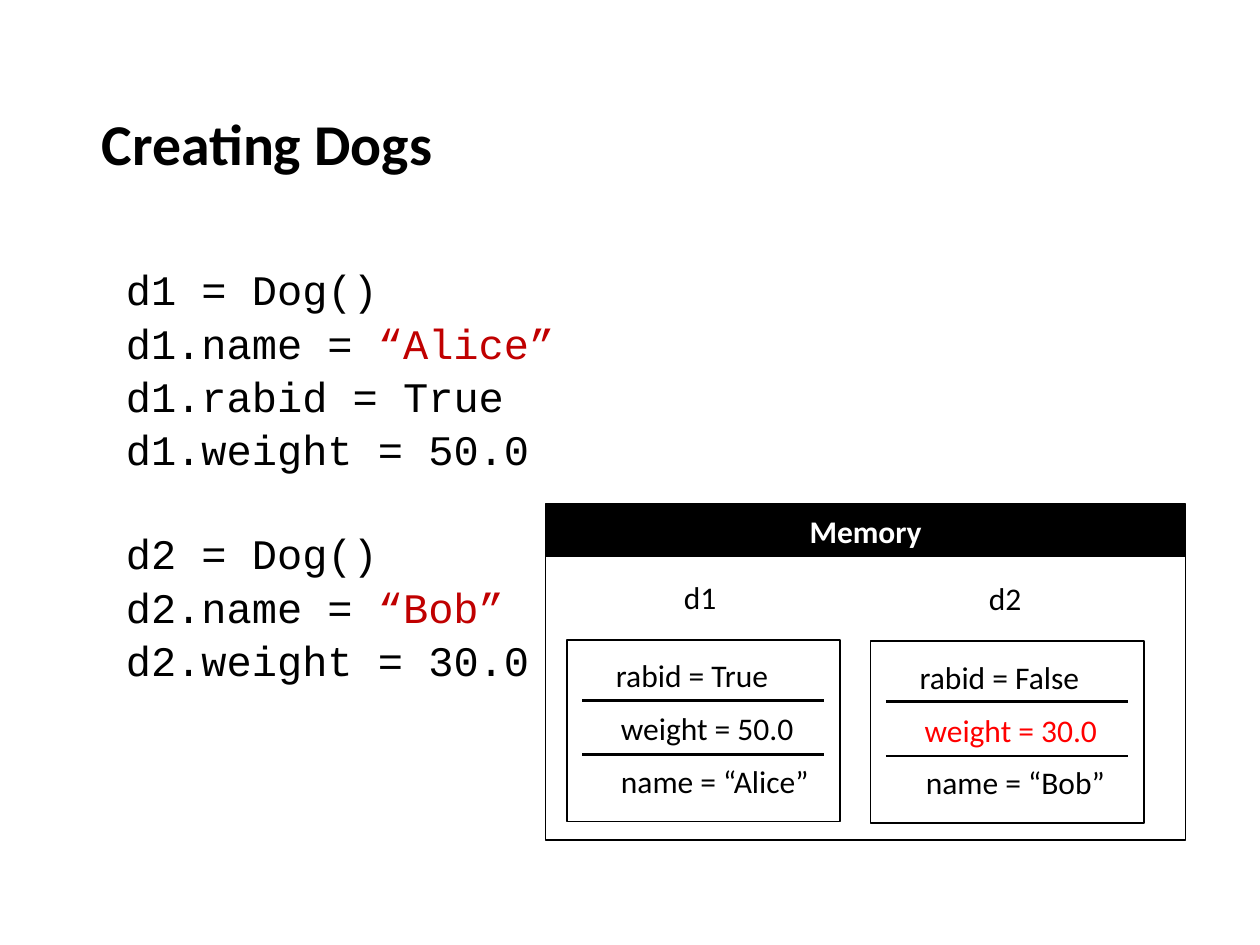
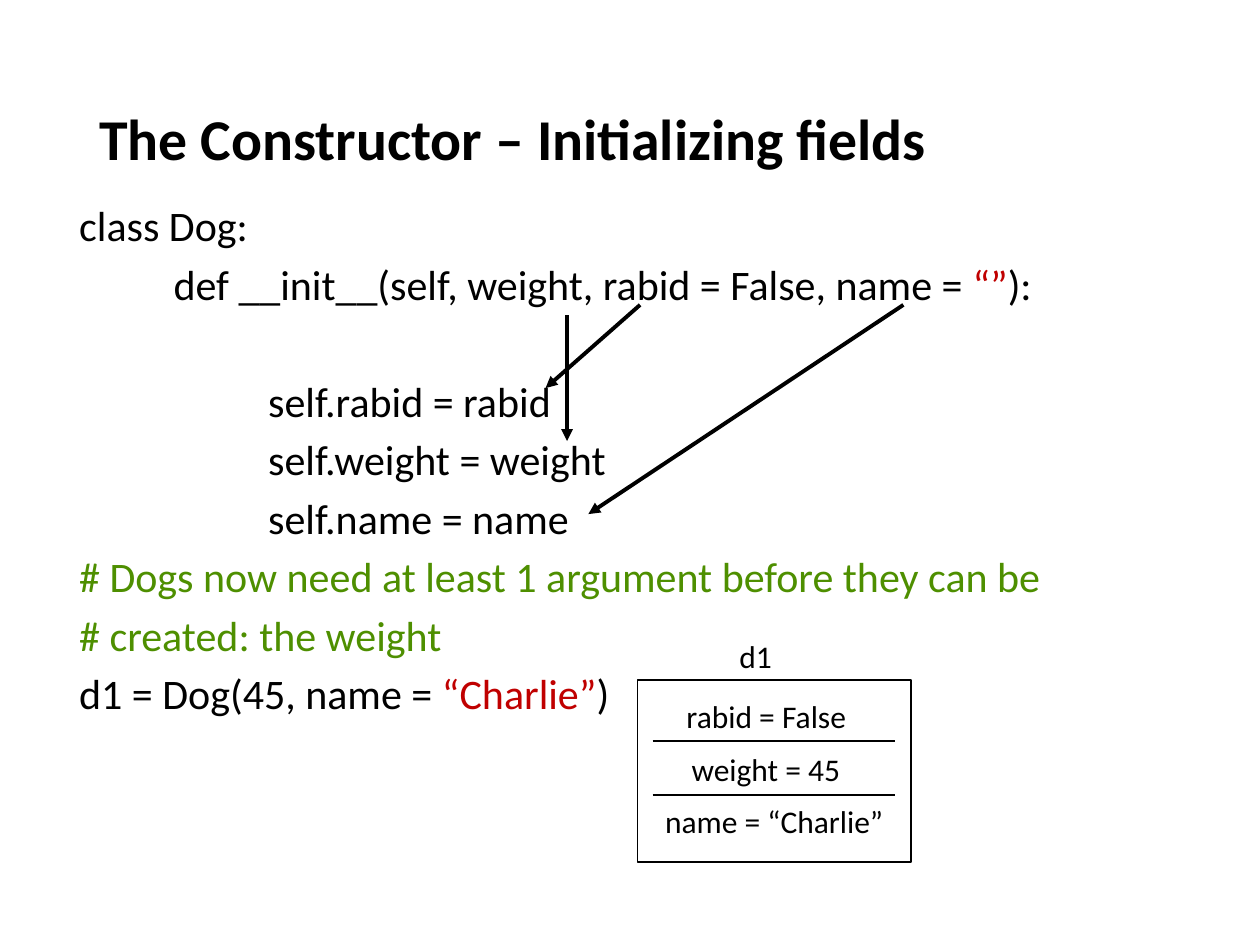
from dataclasses import dataclass
from pptx import Presentation
from pptx.dml.color import RGBColor
from pptx.enum.shapes import MSO_CONNECTOR, MSO_SHAPE
from pptx.enum.text import MSO_ANCHOR, MSO_AUTO_SIZE, PP_ALIGN
from pptx.oxml.ns import qn
from pptx.util import Inches, Pt
from lxml import etree

RECT = MSO_SHAPE.RECTANGLE
LINE = MSO_CONNECTOR.STRAIGHT
MIDDLE = MSO_ANCHOR.MIDDLE
GROW = MSO_AUTO_SIZE.SHAPE_TO_FIT_TEXT
CENTER = PP_ALIGN.CENTER


@dataclass(frozen=True)
class Theme:
    black: str = "000000"
    white: str = "FFFFFF"
    quote: str = "C00000"
    alert: str = "FF0000"
    note: str = "4E8F00"
    sans: str = "Calibri"
    mono: str = "Courier New"
    title: int = 33
    code: int = 24
    label: int = 18
    border: float = 1
    rule: float = 1.5
    arrow: float = 2.25


T = Theme()

# Each line of code: indent level, blank line above, runs of (text, colour)
DOGS = [
    (0, False, [("d1 = Dog()", T.black)]),
    (0, False, [("d1.name = ", T.black), ("“Alice”", T.quote)]),
    (0, False, [("d1.rabid = True", T.black)]),
    (0, False, [("d1.weight = 50.0", T.black)]),
    (0, True, [("d2 = Dog()", T.black)]),
    (0, False, [("d2.name = ", T.black), ("“Bob”", T.quote)]),
    (0, False, [("d2.weight = 30.0", T.black)]),
]
INIT = [
    (0, False, [("class Dog:", T.black)]),
    (1, False, [("def __init__(self, weight, rabid = False, name = ", T.black),
                ("“”", T.quote), ("):", T.black)]),
    (2, True, [("self.rabid = rabid", T.black)]),
    (2, False, [("self.weight = weight", T.black)]),
    (2, False, [("self.name = name", T.black)]),
    (0, False, [("# Dogs now need at least 1 argument before they can be", T.note)]),
    (0, False, [("# created: the weight", T.note)]),
    (0, False, [("d1 = Dog(45, name = ", T.black), ("“Charlie”", T.quote),
                (")", T.black)]),
]
# Each card: place, name and its offset, fields of (text, colour, left offset)
ALICE = ((4.5, 5.08), "d1", (0.83, -0.54), [
    ("rabid = True", T.black, 0.29),
    ("weight = 50.0", T.black, 0.33),
    ("name = “Alice”", T.black, 0.33)])
BOB = ((6.91, 5.09), "d2", (0.84, -0.54), [
    ("rabid = False", T.black, 0.29),
    ("weight = 30.0", T.alert, 0.33),
    ("name = “Bob”", T.black, 0.34)])
CHARLIE = ((5.06, 5.4), "d1", (0.71, -0.39), [
    ("rabid = False", T.black, 0.29),
    ("weight = 45", T.black, 0.33),
    ("name = “Charlie”", T.black, 0.12)])
ARROWS = [
    ((4.5, 2.5), (4.5, 3.5)),
    ((7.17, 2.42), (4.67, 4.08)),
    ((5.08, 2.42), (4.33, 3.08)),
]


def rgb(code):
    return RGBColor.from_string(code)


def style(para, size, color=T.black, face=T.sans, bold=False):
    font = para.font
    font.name, font.size, font.bold = face, Pt(size), bold
    font.color.rgb = rgb(color)


def text_box(slide, left, top, width, height):
    box = slide.shapes.add_textbox(*map(Inches, (left, top, width, height)))
    box.text_frame.word_wrap = True
    return box.text_frame


def add_title(slide, text, left, top):
    frame = text_box(slide, left, top, 8.62, 1.45)
    frame.vertical_anchor = MIDDLE
    para = frame.paragraphs[0]
    para.text = text
    para.line_spacing = 0.9
    style(para, T.title, bold=True)


def add_code(slide, lines, area, face, pitch, gap, blank):
    """Write code lines; blank is the extra space that stands for an empty line."""
    frame = text_box(slide, *area)
    for num, (level, skip, runs) in enumerate(lines):
        para = frame.add_paragraph() if num else frame.paragraphs[0]
        if level:
            para._p.get_or_add_pPr().set("marL", str(Inches(0.75 * level)))
        para.line_spacing = pitch
        if num:
            para.space_before = Pt(gap + (blank if skip else 0))
        style(para, T.code, face=face)
        for text, color in runs:
            run = para.add_run()
            run.text = text
            if color != T.black:
                run.font.color.rgb = rgb(color)


def add_label(slide, text, left, top, width, color=T.black):
    frame = text_box(slide, left, top, width, 0.4)
    frame.auto_size = GROW
    para = frame.paragraphs[0]
    para.text = text
    style(para, T.label, color)


def add_rect(slide, left, top, width, height, fill=None):
    """Draw a filled band, or an outlined box when there is no fill."""
    rect = slide.shapes.add_shape(RECT, *map(Inches, (left, top, width, height)))
    rect.shadow.inherit = False
    if fill:
        rect.fill.solid()
        rect.fill.fore_color.rgb = rgb(fill)
        rect.line.fill.background()
    else:
        rect.fill.background()
        rect.line.color.rgb = rgb(T.black)
        rect.line.width = Pt(T.border)
    return rect


def add_line(slide, start, end, width, head=False):
    line = slide.shapes.add_connector(LINE, *map(Inches, (*start, *end)))
    line.line.color.rgb = rgb(T.black)
    line.line.width = Pt(width)
    if head:
        etree.SubElement(line.line._get_or_add_ln(), qn("a:tailEnd"), type="triangle")
    etree.SubElement(line._element.spPr, qn("a:effectLst"))


def add_card(slide, place, name, shift, fields):
    left, top = place
    add_rect(slide, left, top, 2.17, 1.44)
    add_label(slide, name, left + shift[0], top + shift[1], 0.5)
    for num, (text, color, inset) in enumerate(fields):
        add_label(slide, text, left + inset, top + 0.08 + 0.42 * num,
                  2.16 - inset, color)
        if num:
            y = top + 0.05 + 0.43 * num
            add_line(slide, (left + 0.12, y), (left + 2.04, y), T.rule)


def add_memory(slide, left, top, width):
    add_rect(slide, left, top, width, 2.67)
    band = add_rect(slide, left, top, width, 0.42, T.black)
    band.text_frame.auto_size = GROW
    para = band.text_frame.paragraphs[0]
    para.text = "Memory"
    para.alignment = CENTER
    style(para, T.label, T.white, bold=True)


def main():
    deck = Presentation()
    deck.slide_width, deck.slide_height = Inches(10), Inches(7.5)
    blank = deck.slide_layouts[6]

    slide = deck.slides.add_slide(blank)
    add_code(slide, DOGS, (0.9, 2.02, 8.25, 4.81), T.mono, 1.06, 0, 28.8)
    add_title(slide, "Creating Dogs", 0.71, 0.44)
    add_memory(slide, 4.33, 4, 5.08)
    for card in (ALICE, BOB):
        add_card(slide, *card)

    slide = deck.slides.add_slide(blank)
    add_title(slide, "The Constructor – Initializing fields", 0.69, 0.4)
    add_code(slide, INIT, (0.53, 1.58, 8.78, 4.75), T.sans, 0.9, 7.5, 33.5)
    for start, end in ARROWS:
        add_line(slide, start, end, T.arrow, head=True)
    add_card(slide, *CHARLIE)

    deck.save("out.pptx")


if __name__ == "__main__":
    main()
